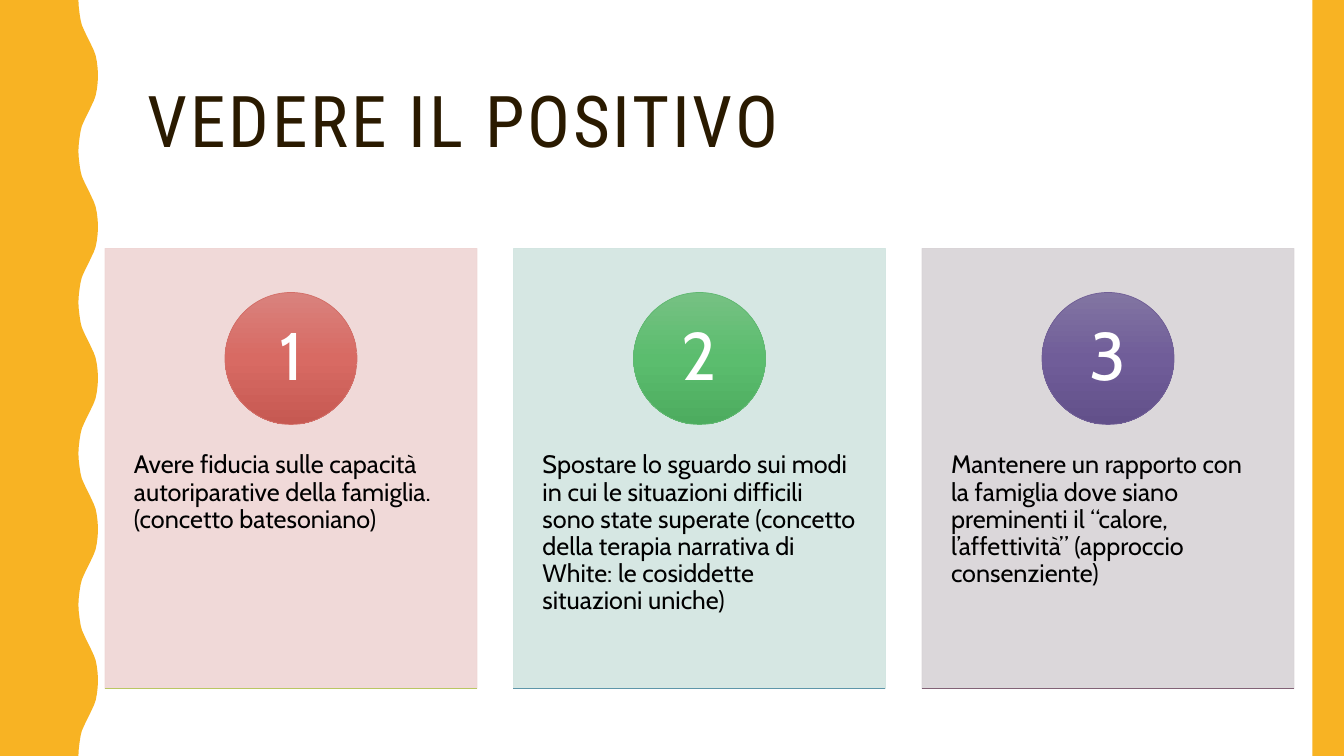
import copy

import pptx
import pptx.dml.color
import pptx.enum.shapes
import pptx.enum.text
import pptx.oxml
import pptx.oxml.ns
import pptx.util
from lxml import etree

Pt = pptx.util.Pt
RGBColor = pptx.dml.color.RGBColor
qn = pptx.oxml.ns.qn
MSO_SHAPE = pptx.enum.shapes.MSO_SHAPE
PP_ALIGN = pptx.enum.text.PP_ALIGN
MSO_ANCHOR = pptx.enum.text.MSO_ANCHOR

AMBER = RGBColor(0xF8, 0xB3, 0x23)
BROWN = RGBColor(0x2A, 0x1A, 0x00)
BLACK = RGBColor(0x00, 0x00, 0x00)
WHITE = RGBColor(0xFF, 0xFF, 0xFF)
ROSE = RGBColor(0xEF, 0xD5, 0xD4)
MINT = RGBColor(0xD2, 0xE5, 0xE0)
MAUVE = RGBColor(0xD8, 0xD3, 0xD6)
RED_EDGE = RGBColor(0xD3, 0x6F, 0x68)
GREEN_EDGE = RGBColor(0x60, 0xB8, 0x71)
PURPLE_EDGE = RGBColor(0x71, 0x5F, 0x96)
REDS = [RGBColor(0xD9, 0x82, 0x7D), RGBColor(0xD8, 0x6A, 0x63), RGBColor(0xC6, 0x59, 0x52)]
GREENS = [RGBColor(0x76, 0xC1, 0x83), RGBColor(0x5B, 0xBD, 0x6E), RGBColor(0x4D, 0xAC, 0x5F)]
PURPLES = [RGBColor(0x82, 0x75, 0xA2), RGBColor(0x70, 0x5D, 0x99), RGBColor(0x62, 0x50, 0x8A)]
OLIVE = RGBColor(0xBA, 0xC6, 0x63)
TEAL = RGBColor(0x5E, 0x96, 0xA9)
PLUM = RGBColor(0x82, 0x62, 0x76)

SLIDE_W, SLIDE_H = 960, 540


def write_text(s, text, *, font, size, color, inset=(7.2, 3.6), spacing=None,
               align=PP_ALIGN.LEFT, anchor=MSO_ANCHOR.TOP):
    tf = s.text_frame
    tf.word_wrap = True
    tf.vertical_anchor = anchor
    tf.margin_left = tf.margin_right = Pt(inset[0])
    tf.margin_top = tf.margin_bottom = Pt(inset[1])
    p = tf.paragraphs[0]
    p.alignment = align
    p.line_spacing = 0.9
    r = p.add_run()
    r.text = text
    r.font.name = font
    r.font.size = Pt(size)
    r.font.color.rgb = color
    if spacing:
        r._r.get_or_add_rPr().set("spc", str(spacing * 100))


def paint(s, colors, edge=None):
    """Fill with one colour, or with a downward gradient of three."""
    s.shadow.inherit = False
    if len(colors) == 1:
        s.fill.solid()
        s.fill.fore_color.rgb = colors[0]
    else:
        s.fill.gradient()
        s.fill.gradient_angle = 270
        stops = s._element.spPr.find(qn("a:gradFill")).find(qn("a:gsLst"))
        stops.append(copy.deepcopy(stops[-1]))
        for stop, position, color in zip(s.fill.gradient_stops, (0, 0.5, 1), colors):
            stop.position = position
            stop.color.rgb = color
    if edge is None:
        s.line.fill.background()
    else:
        s.line.color.rgb = edge
        s.line.width = Pt(0.5)


prs = pptx.Presentation()
prs.slide_width, prs.slide_height = Pt(SLIDE_W), Pt(SLIDE_H)
slide = prs.slides.add_slide(prs.slide_layouts[6])
shapes = slide.shapes

# Wavy left edge: half a wave, mirrored, repeated five times
WAVE = 108
half_wave = [(56, 0), (56.3, 5), (56.9, 10), (57.6, 14.4), (58.5, 18), (59.8, 21),
             (61.2, 24), (62.7, 27), (64.2, 30), (65.6, 33), (67, 36), (68.3, 39.6),
             (69.2, 44), (69.8, 49), (70, 54)]
full_wave = half_wave + [(x, WAVE - y) for x, y in reversed(half_wave[:-1])]
edge_points = [(x, y + WAVE * i) for i in range(5) for x, y in full_wave]
builder = shapes.build_freeform(0, 0)
builder.add_line_segments([(Pt(x), Pt(y)) for x, y in edge_points + [(0, SLIDE_H)]])
paint(builder.convert_to_shape(), [AMBER])

right_band = shapes.add_shape(MSO_SHAPE.RECTANGLE, Pt(937.5), 0, Pt(22.5), Pt(SLIDE_H))
paint(right_band, [AMBER])

title = shapes.add_textbox(Pt(98.6), Pt(30.2), Pt(801.4), Pt(117.4))
write_text(title, "VEDERE IL POSITIVO", font="Roboto Condensed", size=51, color=BROWN,
           spacing=2, anchor=MSO_ANCHOR.MIDDLE)

CARD_LEFT, CARD_TOP, CARD_W, CARD_H, CARD_STEP = 75, 177.5, 265.7, 314.3, 291.8
CIRCLE_TOP, CIRCLE_D = 208.9, 94.3
cards = [
    ("Avere fiducia sulle capacità autoriparative della famiglia. (concetto batesoniano)",
     ROSE, REDS, RED_EDGE, OLIVE),
    ("Spostare lo sguardo sui modi in cui le situazioni difficili sono state superate "
     "(concetto della terapia narrativa di White: le cosiddette situazioni uniche)",
     MINT, GREENS, GREEN_EDGE, TEAL),
    ("Mantenere un rapporto con la famiglia dove siano preminenti il “calore, "
     "l’affettività” (approccio consenziente)",
     MAUVE, PURPLES, PURPLE_EDGE, PLUM),
]
for i, (text, tint, gradient, circle_edge, rule_color) in enumerate(cards):
    left = CARD_LEFT + i * CARD_STEP
    panel = shapes.add_shape(MSO_SHAPE.RECTANGLE, Pt(left), Pt(CARD_TOP), Pt(CARD_W), Pt(CARD_H))
    paint(panel, [tint], tint)
    for color in panel._element.spPr.iter(qn("a:srgbClr")):
        etree.SubElement(color, qn("a:alpha")).set("val", "90000")

    body = shapes.add_textbox(Pt(left), Pt(297), Pt(CARD_W), Pt(188.6))
    write_text(body, text, font="Cabin", size=18, color=BLACK, inset=(20.7, 25.9))

    circle = shapes.add_shape(MSO_SHAPE.OVAL, Pt(left + (CARD_W - CIRCLE_D) / 2),
                              Pt(CIRCLE_TOP), Pt(CIRCLE_D), Pt(CIRCLE_D))
    paint(circle, gradient, circle_edge)
    write_text(circle, str(i + 1), font="Cabin", size=48, color=WHITE, inset=(7.2, 0.9),
               align=PP_ALIGN.CENTER, anchor=MSO_ANCHOR.MIDDLE)

    bottom = CARD_TOP + CARD_H
    rule = shapes.add_connector(pptx.enum.shapes.MSO_CONNECTOR.STRAIGHT, Pt(left), Pt(bottom),
                                Pt(left + CARD_W), Pt(bottom))
    rule.line.color.rgb = rule_color
    rule.line.width = Pt(0.5)
    etree.SubElement(rule._element.spPr, qn("a:effectLst"))

prs.save("out.pptx")
